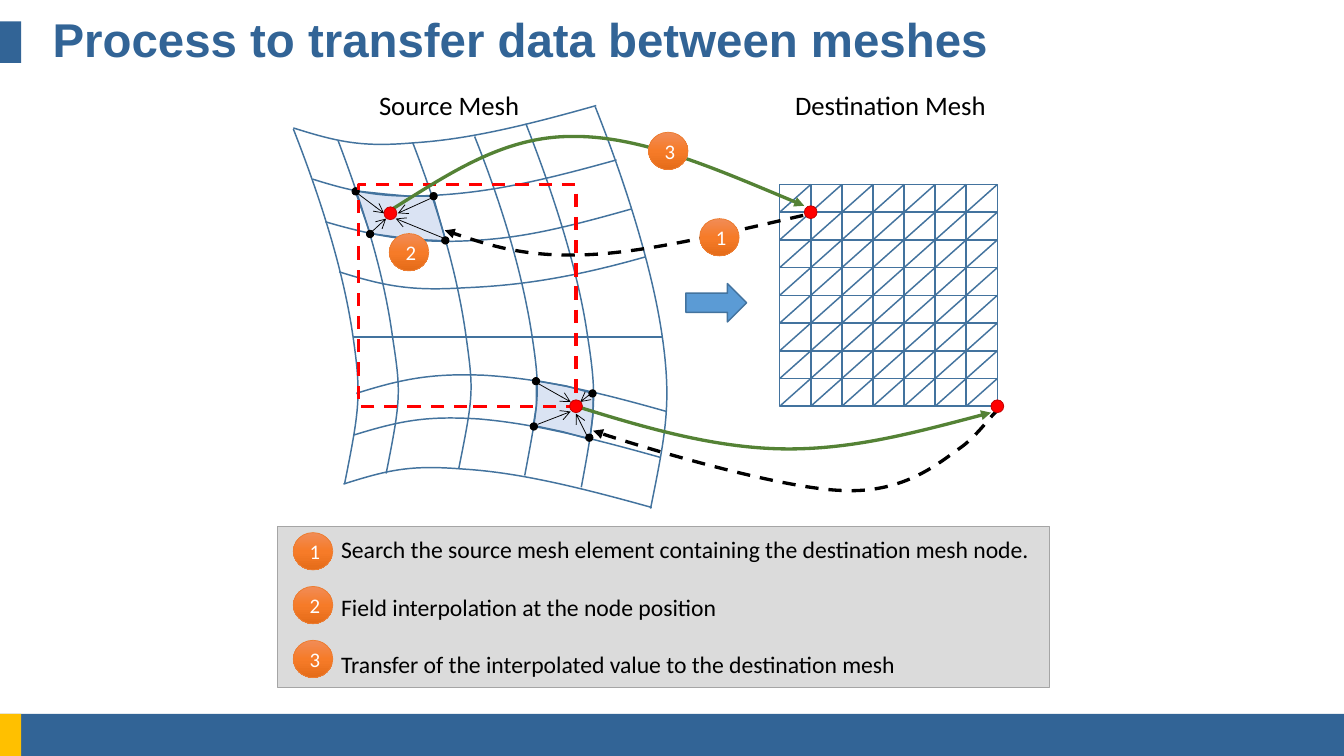
from copy import deepcopy

from lxml.etree import SubElement
from pptx import Presentation
from pptx.dml.color import RGBColor
from pptx.enum.dml import MSO_LINE
from pptx.enum.shapes import MSO_CONNECTOR, MSO_SHAPE as Preset
from pptx.enum.text import MSO_ANCHOR as Anchor, MSO_AUTO_SIZE as AutoSize, PP_ALIGN as Align
from pptx.oxml.ns import qn
from pptx.util import Inches, Pt

NAVY = RGBColor(0x32, 0x64, 0x96)
YELLOW = RGBColor(0xFF, 0xC0, 0x00)
MESH = RGBColor(0x43, 0x73, 0x9E)
BLUE = RGBColor(0x5B, 0x9B, 0xD5)
PALE = RGBColor(0xDA, 0xE3, 0xF3)
PANEL = RGBColor(0xDB, 0xDB, 0xDB)
GRAY = RGBColor(0xA5, 0xA5, 0xA5)
RED = RGBColor(0xFF, 0x00, 0x00)
DARK_RED = RGBColor(0xC0, 0x00, 0x00)
GREEN = RGBColor(0x54, 0x82, 0x35)
ORANGE = RGBColor(0xED, 0x7D, 0x31)
BADGE_STOPS = [(0, RGBColor(0xF1, 0x8C, 0x57)), (0.5, RGBColor(0xF6, 0x7B, 0x28)),
               (1, RGBColor(0xE5, 0x6C, 0x19))]
BLACK = RGBColor(0, 0, 0)
WHITE = RGBColor(0xFF, 0xFF, 0xFF)

COLUMNS, ROWS = 126, 70.9  # square grid, ten cells to the inch


def arc_point(arc, t):
    weights = ((1 - t) ** 3, 3 * t * (1 - t) ** 2, 3 * t * t * (1 - t), t ** 3)
    return [sum(w * knot[axis] for w, knot in zip(weights, arc)) for axis in (0, 1)]


class Page:
    """Draws styled elements on one slide, in grid cells."""

    def __init__(self, deck):
        self.cell = deck.slide_width / COLUMNS
        self.shapes = deck.slides.add_slide(deck.slide_layouts[6]).shapes

    def grid(self, *lengths):
        return [round(length * self.cell) for length in lengths]

    def stroke(self, item, color, width, dash=False, tip=None):
        item.line.color.rgb = color
        item.line.width = Pt(width)
        if dash:
            item.line.dash_style = MSO_LINE.DASH
        if tip:
            SubElement(item._element.spPr.find(qn("a:ln")), qn("a:tailEnd"), type=tip)

    def paint(self, shape, fill, line, width, dash=False, tip=None):
        shape.shadow.inherit = False
        if fill is None:
            shape.fill.background()
        else:
            shape.fill.solid()
            shape.fill.fore_color.rgb = fill
        if line is None:
            shape.line.fill.background()
        else:
            self.stroke(shape, line, width, dash, tip)
        return shape

    def shape(self, preset, place, fill=None, line=None, width=1, dash=False):
        shape = self.shapes.add_shape(preset, *self.grid(*place))
        return self.paint(shape, fill, line, width, dash)

    def dot(self, x, y, size, fill, line):
        self.shape(Preset.OVAL, (x - size / 2, y - size / 2, size, size), fill, line, 0.5)

    def line(self, start, end, color=MESH, width=1, tip=None):
        line = self.shapes.add_connector(MSO_CONNECTOR.STRAIGHT, *self.grid(*start, *end))
        self.stroke(line, color, width, tip=tip)
        SubElement(line._element.spPr, qn("a:effectLst"))
        return line

    def outline(self, points, fill=None, color=MESH, width=1, dash=False, tip=None):
        first, *rest = [self.grid(*point) for point in points]
        builder = self.shapes.build_freeform(*first)
        builder.add_line_segments(rest, close=fill is not None)
        return self.paint(builder.convert_to_shape(), fill, color, width, dash, tip)

    def curve(self, knots, **style):
        """Chain of cubic arcs: a start, then two controls and an end for each arc."""
        shape = self.outline(knots, **style)
        arcs = [knots[first:first + 4] for first in range(0, len(knots) - 1, 3)]
        trace = [arc_point(arc, step / 50) for arc in arcs for step in range(51)]
        lows = [min(axis) for axis in zip(*trace)]
        highs = [max(axis) for axis in zip(*trace)]
        shape.left, shape.top = self.grid(*lows)
        shape.width, shape.height = self.grid(*[b - a for a, b in zip(lows, highs)])
        # Turn the straight segments into cubic ones
        track = shape._element.spPr.find(".//" + qn("a:path"))
        for segment in list(track):
            track.remove(segment)
        track.set("w", str(shape.width))
        track.set("h", str(shape.height))
        for tag, points in [("a:moveTo", knots[:1])] + [("a:cubicBezTo", arc[1:]) for arc in arcs]:
            segment = SubElement(track, qn(tag))
            for point in points:
                x, y = self.grid(point[0] - lows[0], point[1] - lows[1])
                SubElement(segment, qn("a:pt"), x=str(x), y=str(y))

    def text(self, place, lines, size, color=BLACK, font="Calibri", bold=False,
             wrap=True, anchor=Anchor.TOP, gap=0, spacing=None):
        box = self.shapes.add_textbox(*self.grid(*place))
        frame = box.text_frame
        frame.word_wrap = wrap
        frame.vertical_anchor = anchor
        if not wrap:
            frame.auto_size = AutoSize.SHAPE_TO_FIT_TEXT
        frame.text = "\n".join(lines)
        for index, para in enumerate(frame.paragraphs):
            self.font(para, size, color, font, bold)
            para.line_spacing = spacing
            if index:
                para.space_before = Pt(gap)

    def font(self, para, size, color, name="Calibri", bold=False):
        para.font.size, para.font.name, para.font.bold = Pt(size), name, bold
        para.font.color.rgb = color

    def badge(self, x, y, number):
        badge = self.shape(Preset.OVAL, (x, y, 3.7, 3.5), ORANGE, ORANGE, 0.5)
        badge.fill.gradient()
        badge.fill.gradient_angle = 270
        stops = badge._element.spPr.find(".//" + qn("a:gsLst"))
        stops.insert(1, deepcopy(stops[0]))
        for stop, (position, color) in zip(badge.fill.gradient_stops, BADGE_STOPS):
            stop.position, stop.color.rgb = position, color
        badge.text_frame.vertical_anchor = Anchor.MIDDLE
        para = badge.text_frame.paragraphs[0]
        para.text, para.alignment = str(number), Align.CENTER
        self.font(para, 14, WHITE)


def main():
    deck = Presentation()
    deck.slide_width, deck.slide_height = Inches(COLUMNS / 10), Inches(ROWS / 10)
    page = Page(deck)

    # Bars and title
    for place, color in [((0, 66.95, COLUMNS, 3.95), NAVY), ((0, 66.95, 2, 3.95), YELLOW),
                         ((0, 2, 2, 3.9), NAVY)]:
        page.shape(Preset.RECTANGLE, place, color)
    page.text((3.95, 2, 118.1, 3.9), ["Process to transfer data between meshes"], 32,
              NAVY, "Arial", True, anchor=Anchor.MIDDLE, spacing=0.9)
    page.shape(Preset.RECTANGLE, (26, 49.35, 72.4, 15.1), PANEL, GRAY, 0.5)

    # Search path of the lower node, and the two elements found
    search = dict(color=BLACK, width=2.25, dash=True, tip="triangle")
    page.curve([(93.8, 38.3), (93, 38.7), (91.8, 40.8), (89.9, 42.1), (87.8, 43.6),
                (84.6, 46.3), (78.9, 46), (73.2, 45.8), (59.3, 41.7), (55.6, 40.4)], **search)
    page.outline([(50.3, 35.7), (53.1, 36.2), (55.6, 36.9), (55.6, 38.9), (55.3, 41.2),
                  (52.8, 40.5), (50, 39.9), (50.3, 38), (50.3, 35.7)], PALE)
    page.outline([(33.3, 17.9), (36.1, 18.2), (38.3, 18.4), (40.6, 18.4), (41.8, 22.6),
                  (39.9, 22.5), (37.6, 22.3), (34.7, 21.9), (33.3, 17.9)], PALE)

    # Source mesh: down, then across
    for knots in [
        [(38.7, 13.4), (41.5, 20.7), (43, 26.5), (43.7, 31.6), (44.4, 36.7), (44.4, 37), (43, 44)],
        [(44.5, 12.8), (47.4, 20.1), (49.1, 26.3), (49.9, 31.6), (50.7, 36.9), (50.5, 37.6), (49.2, 44.6)],
        [(49.3, 11.6), (52.2, 19), (54.3, 25.9), (55.1, 31.6), (56, 37.3), (55.8, 38.7), (54.5, 45.7)],
        [(31.7, 13.2), (34.5, 20.6), (36.1, 26.4), (36.8, 31.6), (37.6, 36.8), (37.6, 37.4), (36.2, 44.4)],
        [(55.8, 10), (58.7, 17.3), (61.2, 25.3), (62.1, 31.6), (63, 37.9), (62.4, 40.7), (61, 47.7)],
        [(27.5, 12), (31.9, 13.4), (34.1, 13.8), (38.8, 13.4), (43.5, 13.1), (48.5, 12), (55.9, 9.9)],
        [(29.3, 16.8), (33.7, 18.2), (36.4, 18.6), (41.1, 18.3), (45.9, 18), (50.3, 17.1), (57.8, 15)],
        [(30.5, 20.8), (34.9, 22.1), (38.7, 22.8), (43.5, 22.6), (48.3, 22.4), (51.8, 21.7), (59.2, 19.6)],
        [(31.8, 25.5), (36.2, 26.9), (38.7, 27.3), (43.5, 27), (48.3, 26.8), (53.1, 26.2), (60.5, 24.1)],
        [(32.2, 45.4), (36.6, 44), (38.6, 43.6), (43.5, 44), (48.3, 44.3), (53.6, 45.5), (61.1, 47.6)],
        [(33.2, 40.8), (37.7, 39.4), (40.1, 39), (44.9, 39.3), (49.6, 39.7), (54.4, 40.8), (61.9, 42.9)],
        [(33.4, 36.9), (37.8, 35.5), (40.6, 35), (45.4, 35.2), (50.3, 35.5), (55.1, 36.5), (62.5, 38.6)],
        [(27.5, 12.1), (30.4, 19.5), (32.3, 26), (33.1, 31.6), (33.9, 37.1), (33.7, 38.4), (32.3, 45.4)],
    ]:
        page.curve(knots)
    page.line((33.1, 31.6), (62.1, 31.6))
    page.shape(Preset.RIGHT_ARROW, (64.3, 26.6, 5.7, 3.6), BLUE, MESH)

    # Element corners, with arrows to the interpolated points
    for corner in [(33.35, 17.95), (40.65, 18.4), (41.75, 22.55), (34.7, 21.95),
                   (55.55, 36.9), (50.25, 35.75), (50.05, 40), (55.25, 41.05)]:
        page.dot(*corner, 0.7, BLACK, BLACK)
    for start, end in [((33.6, 18.2), (36, 20)), ((40.4, 18.6), (37.3, 20)),
                       ((41.5, 22.3), (37.1, 20.5)), ((34.9, 21.7), (36.2, 20.5)),
                       ((50.4, 39.8), (53.5, 38.6)), ((50.5, 36), (53.5, 37.7)),
                       ((55, 40.8), (54, 38.8)), ((55.8, 36.6), (54.4, 37.7))]:
        page.line(start, end, BLACK, 0.5, "arrow")

    # Destination mesh, and its footprint on the source mesh
    left, top, width, height, across, down = 73.1, 17.3, 20.4, 20.8, 7, 8
    page.shape(Preset.RECTANGLE, (33.6, top, width, height), None, RED, 2.25, True)

    def node(column, row):
        return left + column * width / across, top + row * height / down

    for total in range(1, across + down):
        stops = [max(0, total - down), min(total, across)]
        if total == 11:
            stops.insert(1, 4)  # this diagonal is drawn in two pieces
        for start, end in zip(stops, stops[1:]):
            page.line(node(start, total - start), node(end, total - end))
    frame = page.shape(Preset.RECTANGLE, (left, top, width, height), None, MESH)
    for row in range(1, down):
        rule = page.line(node(0, row), node(across, row))
        if row * 2 == down:
            rule.begin_connect(frame, 1)
            rule.end_connect(frame, 3)
    for column in range(1, across):
        page.line(node(column, 0), node(column, down))

    # Transfer arrows, search path of the upper node, red nodes
    transfer = dict(color=GREEN, width=2.25, tip="triangle")
    page.curve([(54, 38.1), (60.4, 40.1), (66.9, 42), (73.4, 42.1), (79.9, 42.2),
                (86.4, 40.4), (92.9, 38.7)], **transfer)
    page.curve([(36.8, 19.6), (42.1, 16.3), (47.2, 12.8), (53.6, 12.8), (60.1, 12.7),
                (67.7, 16.1), (75.4, 19.3)], **transfer)
    page.curve([(75.3, 20.2), (67.9, 21.9), (60.5, 23.7), (54.8, 23.9), (49.2, 24.1),
                (45.5, 22.9), (41.7, 21.6)], **search)
    for x, y in [(54, 38.1), (93.5, 38.1), (76, 19.9), (36.6, 20)]:
        page.dot(x, y, 1.2, RED, DARK_RED)

    # Step badges and mesh names
    for x, y, number in [(65.6, 20.5, 1), (36.5, 21.9, 2), (60.8, 12.4, 3)]:
        page.badge(x, y, number)
    page.text((34.55, 7.85, 15.4, 4), ["Source Mesh"], 18, wrap=False)
    page.text((73.55, 7.85, 20.2, 4), ["Destination Mesh"], 18, wrap=False)

    # Legend
    for number in (1, 2, 3):
        page.badge(27.5, 44.9 + 5.05 * number, number)
    page.text((31, 49.7, 67.5, 14.5),
              ["Search the source mesh element containing the destination mesh node.",
               "Field interpolation at the node position",
               "Transfer of the interpolated value to the destination mesh"], 16, gap=19.5)

    deck.save("out.pptx")


if __name__ == "__main__":
    main()
